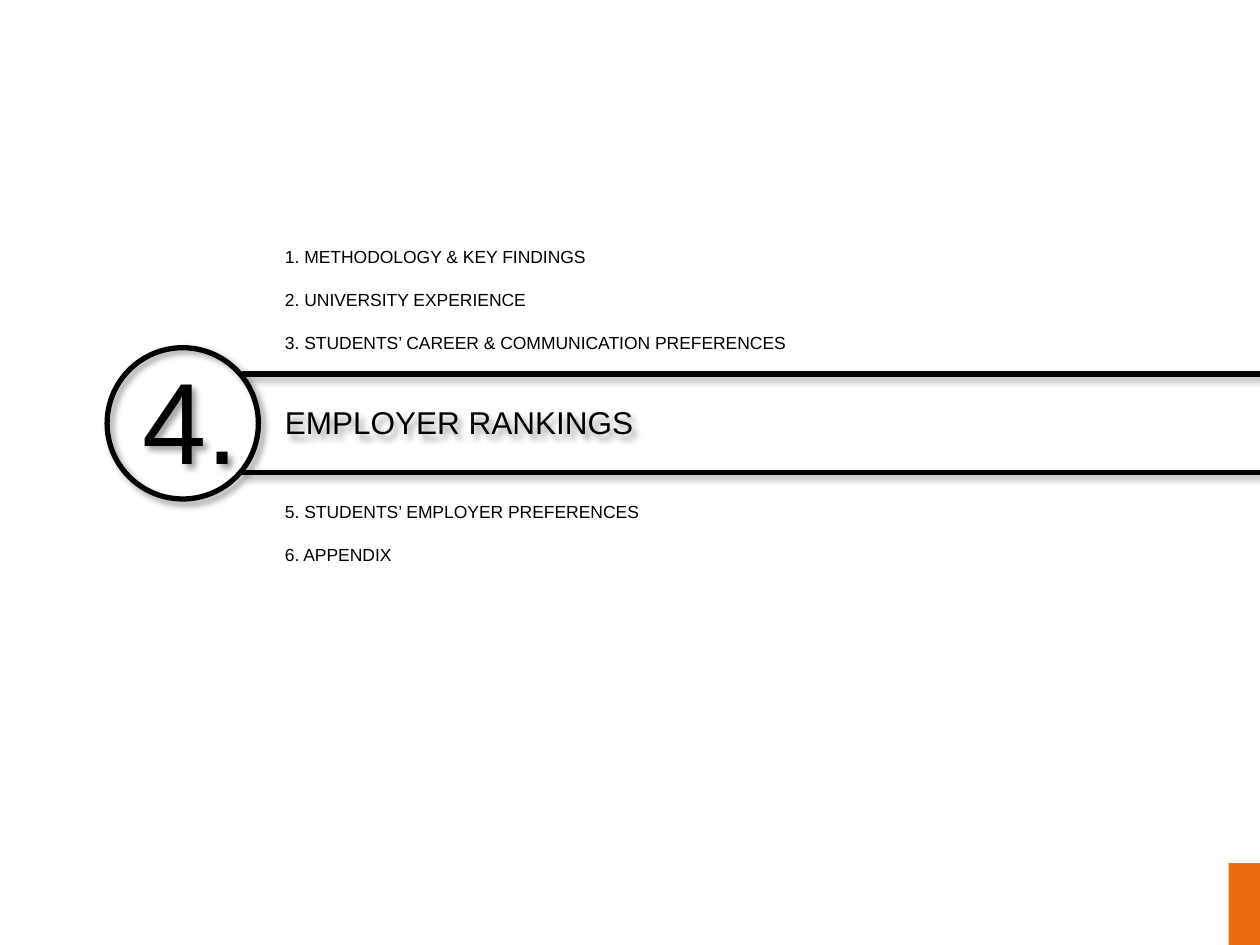
from dataclasses import dataclass
import pptx
import pptx.dml.color
import pptx.enum.shapes
import pptx.enum.text
import pptx.oxml
import pptx.oxml.ns
import pptx.util
from pptx.util import Cm

BLACK = pptx.dml.color.RGBColor(0x00, 0x00, 0x00)
ORANGE = pptx.dml.color.RGBColor(0xEC, 0x6B, 0x10)
FONT = "Arial"
SLIDE_WIDTH, SLIDE_HEIGHT = 25.4, 19.05
TEXT_LEFT = 5.49
RULE_LEFT = 4.88
RULE_TOPS = (7.54, 9.52)


@dataclass(frozen=True)
class Box:
    left: float
    top: float
    width: float
    height: float

    def lengths(self) -> tuple:
        return Cm(self.left), Cm(self.top), Cm(self.width), Cm(self.height)


@dataclass(frozen=True)
class Agenda:
    placeholder: int
    box: Box
    entries: tuple[str, ...]


AGENDAS = (
    Agenda(1, Box(TEXT_LEFT, 4.83, 19.91, 2.39), (
        "1. METHODOLOGY & KEY FINDINGS",
        "2. UNIVERSITY EXPERIENCE",
        "3. STUDENTS’ CAREER & COMMUNICATION PREFERENCES",
    )),
    Agenda(2, Box(TEXT_LEFT, 9.98, 13.39, 1.55), (
        "5. STUDENTS’ EMPLOYER PREFERENCES",
        "6. APPENDIX",
    )),
)


def add_shadow(shape) -> None:
    shape._element.spPr.append(pptx.oxml.parse_xml(
        f'<a:effectLst {pptx.oxml.ns.nsdecls("a")}>'
        '<a:outerShdw blurRad="50800" dist="38100" dir="2700000" algn="tl" rotWithShape="0">'
        '<a:srgbClr val="000000"><a:alpha val="40000"/></a:srgbClr>'
        '</a:outerShdw></a:effectLst>'))


def place(shape, box: Box) -> None:
    shape.left, shape.top, shape.width, shape.height = box.lengths()


def format_frame(shape, anchor) -> None:
    frame = shape.text_frame
    frame.word_wrap = True
    frame.auto_size = pptx.enum.text.MSO_AUTO_SIZE.NONE
    frame.vertical_anchor = anchor


def write(paragraph, text: str, size: float) -> None:
    paragraph.alignment = pptx.enum.text.PP_ALIGN.LEFT
    run = paragraph.add_run()
    run.text = text
    run.font.name = FONT
    run.font.size = pptx.util.Pt(size)
    run.font.color.rgb = BLACK


def draw_agenda(slide, agenda: Agenda) -> None:
    shape = slide.placeholders[agenda.placeholder]
    place(shape, agenda.box)
    format_frame(shape, pptx.enum.text.MSO_ANCHOR.TOP)
    for index, entry in enumerate(agenda.entries):
        frame = shape.text_frame
        paragraph = frame.add_paragraph() if index else frame.paragraphs[0]
        paragraph.space_before = pptx.util.Pt(12.5 if index else 0)
        write(paragraph, entry, 10)
        properties = paragraph._p.get_or_add_pPr()
        properties.set("marL", "0")
        properties.set("indent", "0")
        properties.append(pptx.oxml.parse_xml(f'<a:buNone {pptx.oxml.ns.nsdecls("a")}/>'))


def draw_heading(slide) -> None:
    title = slide.shapes.title
    place(title, Box(TEXT_LEFT, 8, 19.28, 1.02))
    format_frame(title, pptx.enum.text.MSO_ANCHOR.MIDDLE)
    write(title.text_frame.paragraphs[0], "EMPLOYER RANKINGS", 18)
    add_shadow(title)


def draw_accent(slide) -> None:
    accent = slide.shapes.add_shape(
        pptx.enum.shapes.MSO_SHAPE.RECTANGLE, *Box(24.77, 17.4, 0.63, 1.65).lengths())
    accent.shadow.inherit = False
    accent.fill.solid()
    accent.fill.fore_color.rgb = ORANGE
    accent.line.fill.background()


def outline(shape) -> None:
    shape.line.color.rgb = BLACK
    shape.line.width = pptx.util.Pt(3)
    add_shadow(shape)


def draw_rule(slide, top: float) -> None:
    outline(slide.shapes.add_connector(
        pptx.enum.shapes.MSO_CONNECTOR.STRAIGHT,
        Cm(RULE_LEFT), Cm(top), Cm(SLIDE_WIDTH), Cm(top)))


def draw_number(slide) -> None:
    circle = slide.shapes.add_shape(
        pptx.enum.shapes.MSO_SHAPE.OVAL, *Box(2.16, 7.01, 3.05, 3.05).lengths())
    circle.fill.background()
    outline(circle)
    number = slide.shapes.add_textbox(*Box(2.62, 6.91, 3.18, 3.07).lengths())
    format_frame(number, pptx.enum.text.MSO_ANCHOR.TOP)
    write(number.text_frame.paragraphs[0], "4.", 66)
    add_shadow(number)


def main() -> None:
    presentation = pptx.Presentation()
    presentation.slide_width = Cm(SLIDE_WIDTH)
    presentation.slide_height = Cm(SLIDE_HEIGHT)
    slide = presentation.slides.add_slide(presentation.slide_layouts[3])
    draw_accent(slide)
    for agenda in AGENDAS:
        draw_agenda(slide, agenda)
    draw_heading(slide)
    for top in RULE_TOPS:
        draw_rule(slide, top)
    draw_number(slide)
    presentation.save("out.pptx")


if __name__ == "__main__":
    main()
